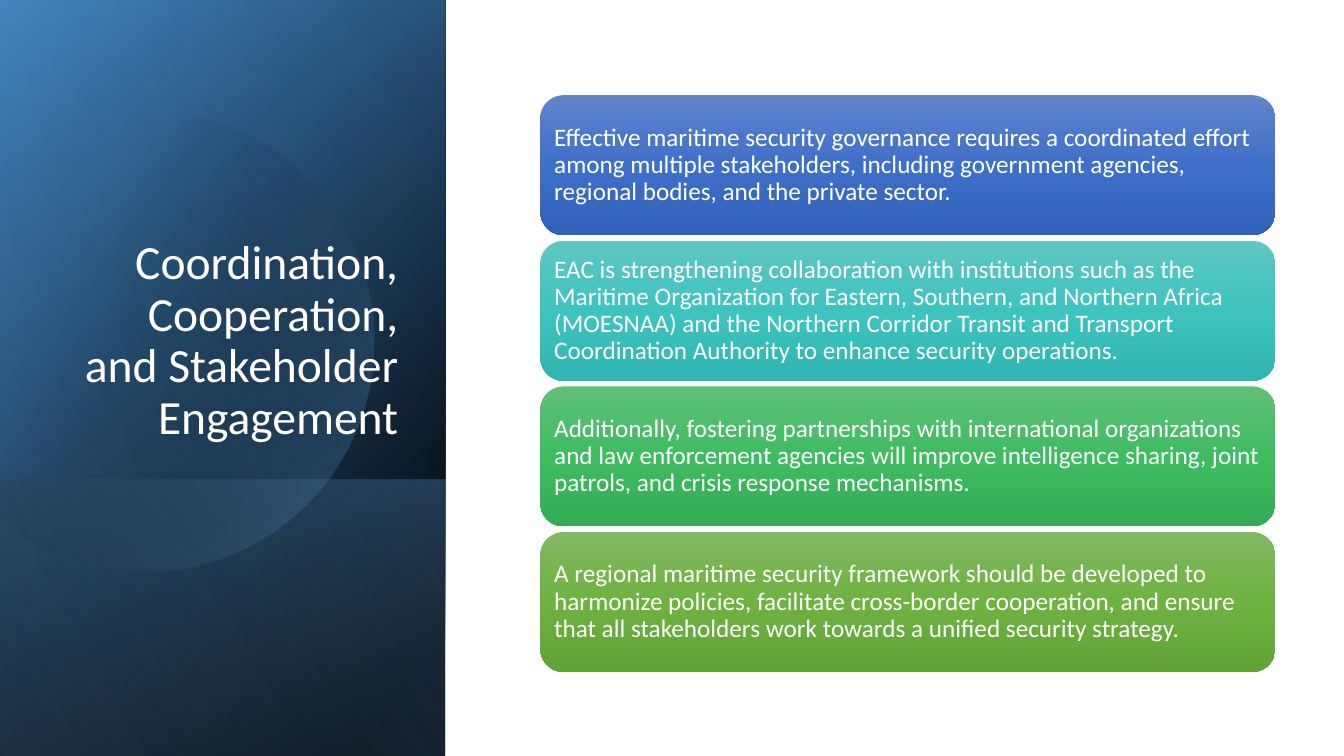
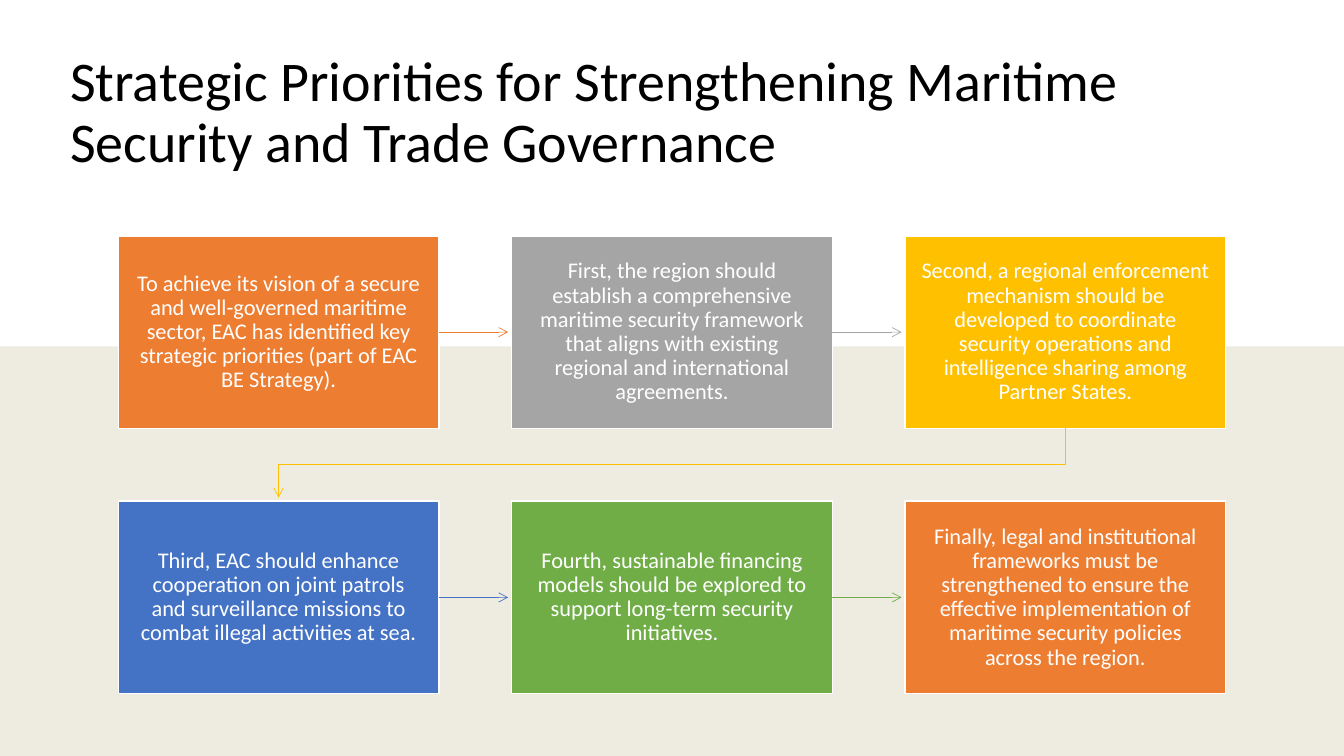
from dataclasses import dataclass
from math import acos, cos, sin

from lxml.etree import SubElement
from pptx import Presentation
from pptx.dml.color import RGBColor
from pptx.enum.shapes import MSO_CONNECTOR as Link, MSO_SHAPE as Preset
from pptx.enum.text import MSO_ANCHOR as Anchor, PP_ALIGN as Align
from pptx.oxml import parse_xml
from pptx.oxml.ns import nsdecls, qn
from pptx.util import Pt


@dataclass(frozen=True)
class Theme:
    font: str = "Calibri"
    side_title: int = 34
    title: int = 40
    card: int = 18
    step: int = 16
    white: str = "FFFFFF"
    black: str = "000000"
    sand: str = "EEEBE1"
    deep_blue: str = "2E75B6"
    sky: str = "5B9BD5"
    pale_sky: str = "9DC3E6"
    orange: str = "ED7D31"
    grey: str = "A5A5A5"
    gold: str = "FFC000"
    blue: str = "4472C4"
    green: str = "70AD47"
    card_blue: tuple = ("6183CB", "3E70CA", "3062BB")
    card_teal: tuple = ("60C6C1", "3DC4BF", "30B5B0")
    card_mint: tuple = ("60C077", "3FBC62", "33AC55")
    card_leaf: tuple = ("81B861", "6FB242", "62A336")


WIDTH, HEIGHT = 960, 540
PANEL_WIDTH = 318


class Deck:
    def __init__(self, theme):
        self.theme = theme
        self.show = Presentation()
        self.show.slide_width, self.show.slide_height = Pt(WIDTH), Pt(HEIGHT)
        self.slide = None

    def new_slide(self):
        self.slide = self.show.slides.add_slide(self.show.slide_layouts[6])

    def block(self, left, top, width, height, colour=None, preset=Preset.RECTANGLE):
        """Add a borderless shape, solid when a colour is given."""
        block = self.slide.shapes.add_shape(
            preset, Pt(left), Pt(top), Pt(width), Pt(height))
        block.shadow.inherit = False
        block.line.fill.background()
        if colour:
            block.fill.solid()
            block.fill.fore_color.rgb = RGBColor.from_string(colour)
        return block

    def shade(self, shape, stops, angle):
        """Fill with a linear gradient of (position, colour, opacity) percentages."""
        shape.fill.background()
        gradient = parse_xml(
            f'<a:gradFill rotWithShape="1" {nsdecls("a")}><a:gsLst/>'
            f'<a:lin ang="{angle * 60000}" scaled="0"/></a:gradFill>')
        for position, colour, opacity in stops:
            stop = SubElement(gradient[0], qn("a:gs"), pos=str(position * 1000))
            tint = SubElement(stop, qn("a:srgbClr"), val=colour)
            if opacity < 100:
                SubElement(tint, qn("a:alpha"), val=str(opacity * 1000))
        properties = shape._element.spPr
        properties.replace(properties.find(qn("a:noFill")), gradient)

    def panel_layer(self, top, stops, angle):
        """Add a mirrored quarter-turned layer from top to the foot of the side panel."""
        depth = HEIGHT - top
        layer = self.block((PANEL_WIDTH - depth) / 2, top + (depth - PANEL_WIDTH) / 2,
                           depth, PANEL_WIDTH)
        layer.rotation = 90
        layer._element.spPr.xfrm.set("flipH", "1")
        self.shade(layer, stops, angle)

    def disc(self, centre_x, centre_y, radius, stops, angle, steps=120):
        """Add a disc cut off by the left slide edge."""
        reach = acos(-centre_x / radius)
        turns = [reach * (2 * step / steps - 1) for step in range(steps + 1)]
        rim = [(Pt(centre_x + radius * cos(turn)), Pt(centre_y + radius * sin(turn)))
               for turn in turns]
        outline = self.slide.shapes.build_freeform(*rim[0])
        outline.add_line_segments(rim[1:], close=True)
        disc = outline.convert_to_shape()
        disc.shadow.inherit = False
        disc.line.fill.background()
        self.shade(disc, stops, angle)

    def set_text(self, shape, text, size, colour, align, anchor, inset):
        frame = shape.text_frame
        frame.text = text
        frame.word_wrap = True
        frame.vertical_anchor = anchor
        frame.margin_left = frame.margin_right = Pt(inset[0])
        frame.margin_top = frame.margin_bottom = Pt(inset[1])
        paragraph = frame.paragraphs[0]
        paragraph.alignment = align
        paragraph.line_spacing = 0.9
        font = paragraph.runs[0].font
        font.name, font.size = self.theme.font, Pt(size)
        font.color.rgb = RGBColor.from_string(colour)

    def title(self, box, text, size, colour, align=Align.LEFT, anchor=Anchor.MIDDLE):
        title = self.slide.shapes.add_textbox(*map(Pt, box))
        self.set_text(title, text, size, colour, align, anchor, (7.2, 3.6))

    def card(self, box, text, colours):
        card = self.block(*box, preset=Preset.ROUNDED_RECTANGLE)
        self.shade(card, [(0, colours[0], 100), (50, colours[1], 100),
                          (100, colours[2], 100)], 90)
        self.set_text(card, text, self.theme.card, self.theme.white,
                      Align.LEFT, Anchor.MIDDLE, (5, 5))

    def step(self, box, text, colour):
        step = self.block(*box, colour)
        step.line.color.rgb = RGBColor.from_string(self.theme.white)
        step.line.width = Pt(1)
        self.set_text(step, text, self.theme.step, self.theme.white,
                      Align.CENTER, Anchor.MIDDLE, (11.5, 11.5))

    def point(self, line, colour):
        """Give a line its colour, width and open arrowhead."""
        line.color.rgb = RGBColor.from_string(colour)
        line.width = Pt(0.5)
        SubElement(line._get_or_add_ln(), qn("a:tailEnd"), type="arrow")

    def arrow(self, start, end, colour):
        arrow = self.slide.shapes.add_connector(
            Link.STRAIGHT, *map(Pt, (*start, *end)))
        self.point(arrow.line, colour)
        SubElement(arrow._element.spPr, qn("a:effectLst"))

    def bent_arrow(self, corners, colour):
        points = [(Pt(x), Pt(y)) for x, y in corners]
        route = self.slide.shapes.build_freeform(*points[0])
        route.add_line_segments(points[1:], close=False)
        arrow = route.convert_to_shape()
        arrow.shadow.inherit = False
        arrow.fill.background()
        self.point(arrow.line, colour)


def coordination(deck):
    theme = deck.theme
    deck.new_slide()
    deck.panel_layer(0, [(8, theme.black, 100), (100, theme.deep_blue, 100)], 50)
    deck.panel_layer(0, [(0, theme.black, 0), (99, theme.sky, 46)], 30)
    deck.panel_layer(342.7, [(2, theme.sky, 29), (100, theme.black, 30)], 130)
    deck.disc(102.5, 243.5, 165, [(29, theme.black, 0), (100, theme.sky, 43)], 30)
    deck.panel_layer(0, [(0, theme.black, 0), (99, theme.pale_sky, 11)], 120)
    deck.title((46, 132.5, 245.5, 188.5),
               "Coordination, Cooperation, and Stakeholder Engagement",
               theme.side_title, theme.white, Align.RIGHT, Anchor.BOTTOM)
    cards = [
        ("Effective maritime security governance requires a coordinated effort among "
         "multiple stakeholders, including government agencies, regional bodies, and "
         "the private sector.", theme.card_blue),
        ("EAC is strengthening collaboration with institutions such as the Maritime "
         "Organization for Eastern, Southern, and Northern Africa (MOESNAA) and the "
         "Northern Corridor Transit and Transport Coordination Authority to enhance "
         "security operations.", theme.card_teal),
        ("Additionally, fostering partnerships with international organizations and "
         "law enforcement agencies will improve intelligence sharing, joint patrols, "
         "and crisis response mechanisms.", theme.card_mint),
        ("A regional maritime security framework should be developed to harmonize "
         "policies, facilitate cross-border cooperation, and ensure that all "
         "stakeholders work towards a unified security strategy.", theme.card_leaf),
    ]
    for row, (text, colours) in enumerate(cards):
        deck.card((386, 68 + 104 * row, 525, 100), text, colours)


def priorities(deck):
    theme = deck.theme
    deck.new_slide()
    horizon = 247.5
    deck.block(0, horizon, WIDTH, HEIGHT - horizon, theme.sand)
    deck.title((43, 29, 873.5, 104.5),
               "Strategic Priorities for Strengthening Maritime Security and Trade "
               "Governance", theme.title, theme.black)
    steps = [
        ("To achieve its vision of a secure and well-governed maritime sector, EAC has "
         "identified key strategic priorities (part of EAC BE Strategy).", theme.orange),
        ("First, the region should establish a comprehensive maritime security "
         "framework that aligns with existing regional and international agreements.",
         theme.grey),
        ("Second, a regional enforcement mechanism should be developed to coordinate "
         "security operations and intelligence sharing among Partner States.",
         theme.gold),
        ("Third, EAC should enhance cooperation on joint patrols and surveillance "
         "missions to combat illegal activities at sea.", theme.blue),
        ("Fourth, sustainable financing models should be explored to support long-term "
         "security initiatives.", theme.green),
        ("Finally, legal and institutional frameworks must be strengthened to ensure "
         "the effective implementation of maritime security policies across the "
         "region.", theme.orange),
    ]
    columns, width, height, clearance = 3, 229, 137.5, 2.5
    spots = [(84.5 + 281 * (index % columns), 168.5 + 189.5 * (index // columns))
             for index in range(len(steps))]
    for (left, top), (text, colour) in zip(spots, steps):
        deck.step((left, top, width, height), text, colour)
    for (left, top), (next_left, next_top), (_, colour) in zip(spots, spots[1:], steps):
        if top == next_top:
            middle = top + height / 2
            deck.arrow((left + width, middle), (next_left - clearance, middle), colour)
        else:
            start, end = left + width / 2, next_left + width / 2
            bottom = top + height
            bend = (bottom + next_top) / 2
            deck.bent_arrow([(start, bottom), (start, bend), (end, bend),
                             (end, next_top - clearance)], colour)


def main():
    deck = Deck(Theme())
    coordination(deck)
    priorities(deck)
    deck.show.save("out.pptx")


if __name__ == "__main__":
    main()
